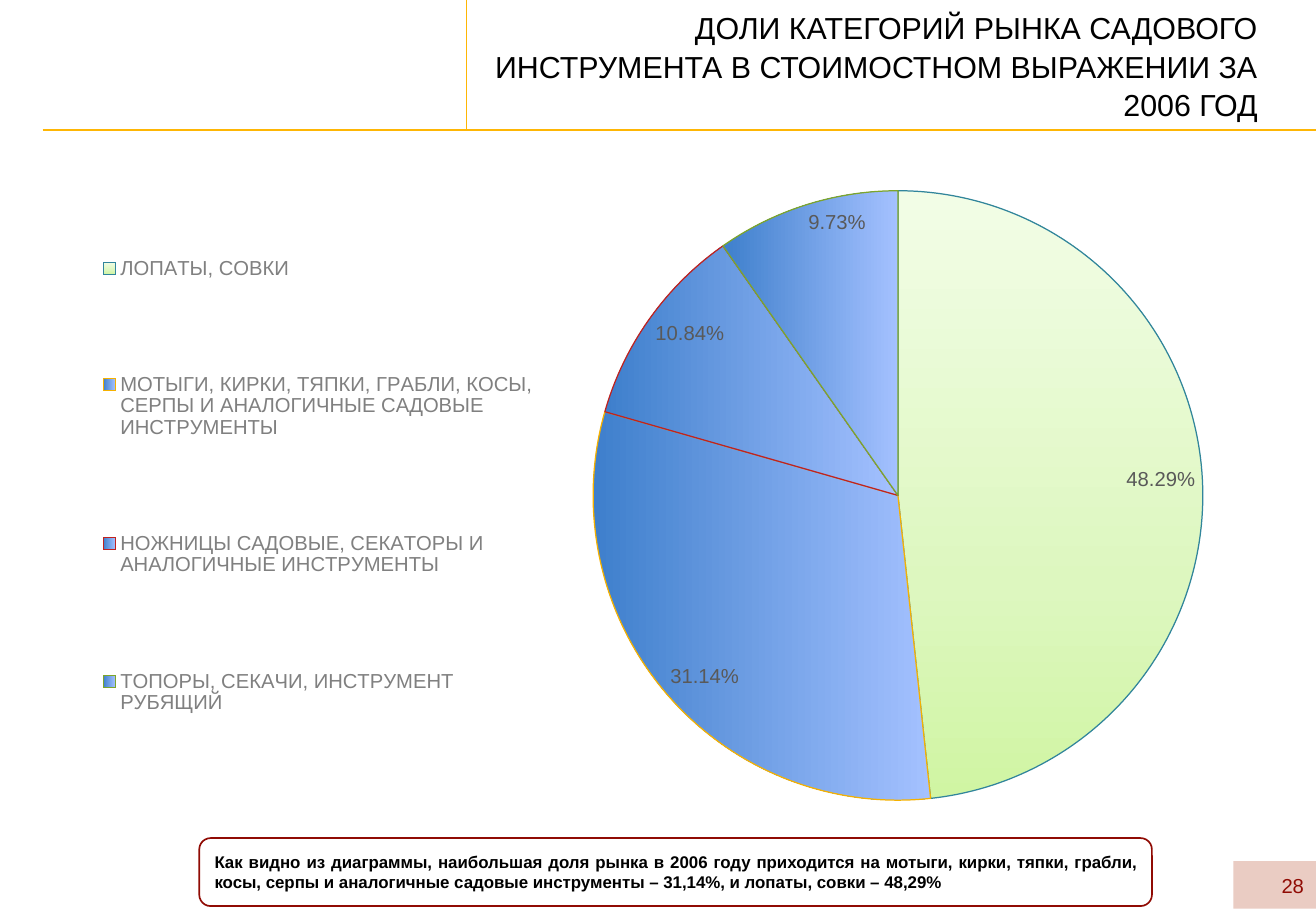
"""Build a slide with a pie chart of garden tool market shares."""
from dataclasses import dataclass

from lxml import etree
from pptx import Presentation
from pptx.chart.data import CategoryChartData
from pptx.dml.color import RGBColor
from pptx.enum.chart import XL_CHART_TYPE, XL_LABEL_POSITION, XL_LEGEND_POSITION
from pptx.enum.shapes import MSO_CONNECTOR, MSO_SHAPE
from pptx.enum.text import MSO_ANCHOR, MSO_AUTO_SIZE, PP_ALIGN
from pptx.oxml import parse_xml
from pptx.oxml.ns import nsdecls, qn
from pptx.util import Inches, Pt

PIE = XL_CHART_TYPE.PIE
INSIDE_END = XL_LABEL_POSITION.INSIDE_END
LEGEND_LEFT = XL_LEGEND_POSITION.LEFT
STRAIGHT = MSO_CONNECTOR.STRAIGHT
RECT = MSO_SHAPE.RECTANGLE
ROUND_RECT = MSO_SHAPE.ROUNDED_RECTANGLE
MIDDLE = MSO_ANCHOR.MIDDLE
NO_FIT = MSO_AUTO_SIZE.NONE
RIGHT = PP_ALIGN.RIGHT
JUSTIFY = PP_ALIGN.JUSTIFY


@dataclass(frozen=True)
class Theme:
    """Colours, font and type sizes of the slide."""
    font: str = "Arial"
    text: str = "000000"
    rule: str = "FEB604"
    accent: str = "900B04"
    page_fill: str = "EACCC3"
    legend: str = "808080"
    label: str = "595959"
    title_size: int = 18
    chart_size: int = 12
    page_size: int = 12
    note_size: int = 10


THEME = Theme()
TITLE = "ДОЛИ КАТЕГОРИЙ РЫНКА САДОВОГО ИНСТРУМЕНТА В СТОИМОСТНОМ ВЫРАЖЕНИИ ЗА 2006 ГОД"
NOTE = ("Как видно из диаграммы, наибольшая доля рынка в 2006 году приходится на мотыги, "
        "кирки, тяпки, грабли, косы, серпы и аналогичные садовые инструменты – 31,14%, "
        "и лопаты, совки – 48,29%")
SHARES = [
    ("ЛОПАТЫ, СОВКИ", 0.4829, "31859C", ("A5DDF3", "C1E6F5", "E6F6FC")),
    ("МОТЫГИ, КИРКИ, ТЯПКИ, ГРАБЛИ, КОСЫ, СЕРПЫ И АНАЛОГИЧНЫЕ САДОВЫЕ ИНСТРУМЕНТЫ",
     0.3114, "F5B100", ("FFDFBC", "FFE8D0", "FFF6ED")),
    ("НОЖНИЦЫ САДОВЫЕ, СЕКАТОРЫ И АНАЛОГИЧНЫЕ ИНСТРУМЕНТЫ",
     0.1084, "C0221F", ("FFA3A3", "FFBEBE", "FFE6E6")),
    ("ТОПОРЫ, СЕКАЧИ, ИНСТРУМЕНТ РУБЯЩИЙ", 0.0973, "7DA52B", ("D0F5A3", "DDF7BF", "F2FDE6")),
]
STOPS = (0, 35, 100)


def style_font(font, size, color, bold=False):
    """Set typeface, size, weight and colour."""
    font.name = THEME.font
    font.size = Pt(size)
    font.bold = bold
    font.color.rgb = RGBColor.from_string(color)


def write_text(sp, text, size, color, align, bold=False):
    """Fill a shape with one formatted paragraph."""
    tf = sp.text_frame
    tf.text = text
    tf.word_wrap = True
    tf.auto_size = NO_FIT
    tf.vertical_anchor = MIDDLE
    p = tf.paragraphs[0]
    p.alignment = align
    style_font(p.runs[0].font, size, color, bold)
    return p


def add_title(slide, text, left, top, width, height):
    """Place and format the title placeholder."""
    sp = slide.shapes.title
    sp.left, sp.top, sp.width, sp.height = map(Inches, (left, top, width, height))
    p = write_text(sp, text, THEME.title_size, THEME.text, RIGHT)
    p.line_spacing = 1.05


def add_rule(slide, x1, y1, x2, y2, weight):
    """Draw a straight rule without shadow."""
    line = slide.shapes.add_connector(STRAIGHT, *map(Inches, (x1, y1, x2, y2)))
    line.line.color.rgb = RGBColor.from_string(THEME.rule)
    line.line.width = Pt(weight)
    etree.SubElement(line._element.spPr, qn("a:effectLst"))


def add_box(slide, kind, box, fill=None, line=None):
    """Draw a flat shape with an optional fill and outline."""
    sp = slide.shapes.add_shape(kind, *map(Inches, box))
    sp.shadow.inherit = False
    if fill:
        sp.fill.solid()
        sp.fill.fore_color.rgb = RGBColor.from_string(fill)
    else:
        sp.fill.background()
    if line:
        sp.line.color.rgb = RGBColor.from_string(line)
        sp.line.width = Pt(1)
    else:
        sp.line.fill.background()
    return sp


def set_layout(element, x, y, w, h, inner=False):
    """Give a chart part a manual layout in fractions of the chart."""
    for old in element.findall(qn("c:layout")):
        element.remove(old)
    target = '<c:layoutTarget val="inner"/>' if inner else ""
    sizes = "".join(f'<c:{k} val="{v}"/>' for k, v in zip("xywh", (x, y, w, h)))
    layout = parse_xml(
        f'<c:layout {nsdecls("c")}><c:manualLayout>{target}<c:xMode val="edge"/>'
        f'<c:yMode val="edge"/>{sizes}</c:manualLayout></c:layout>')
    position = element.find(qn("c:legendPos"))
    if position is None:
        element.insert(0, layout)
    else:
        position.addnext(layout)


def style_slice(point, line, colors):
    """Give a slice its outline and upward gradient."""
    point.format.line.color.rgb = RGBColor.from_string(line)
    point.format.line.width = Pt(0.75)
    point.format.fill.gradient()
    grad = point._element.find(".//" + qn("a:gradFill")) if hasattr(point, "_element") else None
    if grad is None:
        grad = point.format.fill._fill._gradFill
    stops = "".join(f'<a:gs pos="{pos * 1000}"><a:srgbClr val="{c}"/></a:gs>'
                    for pos, c in zip(STOPS, colors))
    grad.getparent().replace(grad, parse_xml(
        f'<a:gradFill {nsdecls("a")} rotWithShape="1"><a:gsLst>{stops}</a:gsLst>'
        '<a:lin ang="16200000" scaled="1"/></a:gradFill>'))


def add_share_chart(slide, left, top, width, height):
    """Add the pie chart with legend and value labels."""
    data = CategoryChartData(number_format="0.00%")
    data.categories = [name for name, *_ in SHARES]
    data.add_series("Series 1", [share for _, share, *_ in SHARES])
    box = map(Inches, (left, top, width, height))
    chart = slide.shapes.add_chart(PIE, *box, data).chart
    chart.has_title = False
    style_font(chart.font, THEME.chart_size, THEME.text)
    chart.has_legend = True
    chart.legend.position = LEGEND_LEFT
    chart.legend.include_in_layout = False
    style_font(chart.legend.font, THEME.chart_size, THEME.legend)
    set_layout(chart.legend._element, 0.01, 0.02, 0.38, 0.97)
    set_layout(chart._chartSpace.chart.plotArea, 0.43, 0.06, 0.51, 0.92, inner=True)
    plot = chart.plots[0]
    plot.vary_by_categories = True
    plot.has_data_labels = True
    labels = plot.data_labels
    labels.show_value = True
    labels.show_percentage = False
    labels.number_format = "0.00%"
    labels.number_format_is_linked = False
    labels.position = INSIDE_END
    style_font(labels.font, THEME.chart_size, THEME.label)
    for i, (_, _, line, colors) in enumerate(SHARES):
        style_slice(plot.series[0].points[i], line, colors)


def main():
    """Build and save the slide."""
    prs = Presentation()
    prs.slide_width, prs.slide_height = Inches(10.83), Inches(7.5)
    slide = prs.slides.add_slide(prs.slide_layouts[5])
    page = add_box(slide, RECT, (10.15, 7.09, 0.68, 0.39), fill=THEME.page_fill)
    write_text(page, "28", THEME.page_size, THEME.accent, RIGHT)
    add_rule(slide, 0.35, 1.07, 10.83, 1.07, 1)
    add_rule(slide, 3.84, 1.07, 3.84, 0, 0.75)
    add_title(slide, TITLE, 3.84, 0, 6.61, 1.07)
    add_share_chart(slide, 0.65, 1.23, 9.84, 5.48)
    note = add_box(slide, ROUND_RECT, (1.64, 6.9, 7.84, 0.56), line=THEME.accent)
    write_text(note, NOTE, THEME.note_size, THEME.text, JUSTIFY, bold=True)
    prs.save("out.pptx")


if __name__ == "__main__":
    main()
